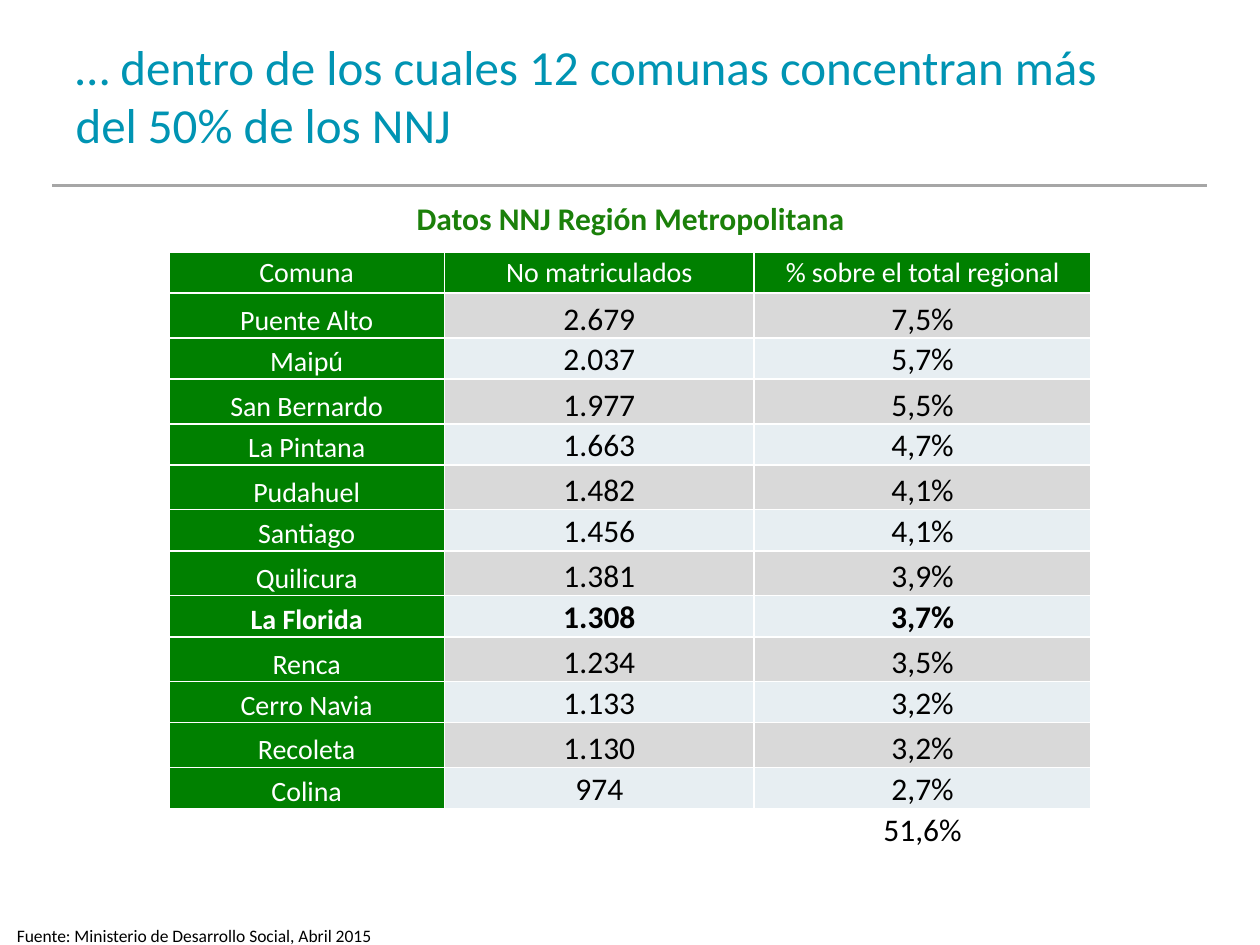
from dataclasses import dataclass
from typing import Any

from lxml import etree
from pptx import Presentation
from pptx.dml.color import RGBColor
from pptx.enum.shapes import MSO_CONNECTOR
from pptx.enum.text import MSO_ANCHOR, MSO_AUTO_SIZE, PP_ALIGN
from pptx.oxml.ns import qn
from pptx.util import Pt

LEFT, CENTER = PP_ALIGN.LEFT, PP_ALIGN.CENTER
TOP, MIDDLE, BOTTOM = MSO_ANCHOR.TOP, MSO_ANCHOR.MIDDLE, MSO_ANCHOR.BOTTOM
STRAIGHT = MSO_CONNECTOR.STRAIGHT
NO_AUTOFIT, GROW = MSO_AUTO_SIZE.NONE, MSO_AUTO_SIZE.SHAPE_TO_FIT_TEXT

FONT = "Calibri"
WHITE, BLACK, GREEN = "FFFFFF", "000000", "008000"
BANDS = ("D9D9D9", "E7EEF2")
COLUMN_WIDTHS = (157.5, 177, 192.5)
ROW_HEIGHT = 23.5
HEADINGS = ("Comuna", "No matriculados", "% sobre el total regional")
REGIONAL_SHARE = "51,6%"


@dataclass
class Style:
    size: float
    color: str
    bold: bool = False
    align: Any = LEFT
    line_spacing: float = 1.0


@dataclass
class Commune:
    name: str
    not_enrolled: str
    share: str
    bold: bool = False


COMMUNES = [
    Commune("Puente Alto", "2.679", "7,5%"),
    Commune("Maipú", "2.037", "5,7%"),
    Commune("San Bernardo", "1.977", "5,5%"),
    Commune("La Pintana", "1.663", "4,7%"),
    Commune("Pudahuel", "1.482", "4,1%"),
    Commune("Santiago", "1.456", "4,1%"),
    Commune("Quilicura", "1.381", "3,9%"),
    Commune("La Florida", "1.308", "3,7%", bold=True),
    Commune("Renca", "1.234", "3,5%"),
    Commune("Cerro Navia", "1.133", "3,2%"),
    Commune("Recoleta", "1.130", "3,2%"),
    Commune("Colina", "974", "2,7%"),
]


def rgb(value: str) -> RGBColor:
    return RGBColor.from_string(value)


def apply(target: Any, values: dict[str, Any]) -> None:
    for attribute, value in values.items():
        setattr(target, attribute, value)


def write(frame: Any, text: str, style: Style) -> None:
    paragraph = frame.paragraphs[0]
    apply(paragraph, {"alignment": style.align, "line_spacing": style.line_spacing})
    run = paragraph.add_run()
    run.text = text
    apply(run.font, {"name": FONT, "size": Pt(style.size), "bold": style.bold})
    run.font.color.rgb = rgb(style.color)


def add_label(slide: Any, box: tuple, text: str, style: Style, side_margin: float) -> None:
    frame = slide.shapes.add_textbox(*map(Pt, box)).text_frame
    apply(frame, {"word_wrap": True, "auto_size": GROW, "vertical_anchor": TOP,
                  "margin_left": Pt(side_margin), "margin_right": Pt(side_margin)})
    write(frame, text, style)


def format_cell(cell: Any, fill: str, anchor: Any = BOTTOM) -> None:
    apply(cell, {"margin_left": Pt(0.75), "margin_right": Pt(0.75),
                 "margin_top": Pt(0.75), "margin_bottom": 0, "vertical_anchor": anchor})
    properties = cell._tc.get_or_add_tcPr()
    for edge in ("a:lnL", "a:lnR", "a:lnT", "a:lnB"):
        border = etree.SubElement(properties, qn(edge), w=str(Pt(1)))
        solid = etree.SubElement(border, qn("a:solidFill"))
        etree.SubElement(solid, qn("a:srgbClr"), val=WHITE)
    cell.fill.solid()
    cell.fill.fore_color.rgb = rgb(fill)


def add_commune_table(slide: Any) -> None:
    row_count = len(COMMUNES) + 2
    table = slide.shapes.add_table(
        row_count, len(COLUMN_WIDTHS), Pt(96.5), Pt(144),
        Pt(sum(COLUMN_WIDTHS)), Pt(row_count * ROW_HEIGHT)).table
    apply(table, {"first_row": False, "horz_banding": False})
    for column, width in zip(table.columns, COLUMN_WIDTHS):
        column.width = Pt(width)

    # Header row
    for column, heading in enumerate(HEADINGS):
        cell = table.cell(0, column)
        format_cell(cell, GREEN, MIDDLE)
        write(cell.text_frame, heading, Style(16, WHITE, align=CENTER))

    # One row per commune, shaded in turn; the grey rows have wider line spacing
    for index, commune in enumerate(COMMUNES):
        band = BANDS[index % 2]
        spacing = 1.15 if index % 2 == 0 else 1.0
        name_style = Style(16, WHITE, commune.bold, CENTER)
        figure_style = Style(18, BLACK, commune.bold, CENTER, spacing)
        entries = ((commune.name, GREEN, name_style),
                   (commune.not_enrolled, band, figure_style),
                   (commune.share, band, figure_style))
        for column, (text, fill, style) in enumerate(entries):
            cell = table.cell(index + 1, column)
            format_cell(cell, fill)
            write(cell.text_frame, text, style)

    # Total row
    total = row_count - 1
    for column in range(len(COLUMN_WIDTHS)):
        format_cell(table.cell(total, column), WHITE)
    table.cell(total, 0).merge(table.cell(total, 1))
    write(table.cell(total, 2).text_frame, REGIONAL_SHARE, Style(18, BLACK, align=CENTER))


def main() -> None:
    deck = Presentation()
    apply(deck, {"slide_width": Pt(720), "slide_height": Pt(540)})
    slide = deck.slides.add_slide(deck.slide_layouts[5])

    # Title and the rule below it
    title = slide.shapes.title
    apply(title, {"left": Pt(36), "top": Pt(15), "width": Pt(613.5), "height": Pt(78.5)})
    apply(title.text_frame, {"word_wrap": True, "auto_size": NO_AUTOFIT,
                             "vertical_anchor": MIDDLE})
    write(title.text_frame,
          "… dentro de los cuales 12 comunas concentran más del 50% de los NNJ",
          Style(28, "0094B3"))
    rule = slide.shapes.add_connector(STRAIGHT, Pt(30), Pt(106), Pt(690), Pt(106))
    rule.line.color.rgb = rgb("A6A6A6")
    rule.line.width = Pt(2.25)
    etree.SubElement(rule._element.spPr, qn("a:effectLst"))

    # Table heading, source and table
    add_label(slide, (182, 110, 356.5, 28), "Datos NNJ Región Metropolitana",
              Style(18, "1B800A", True, CENTER), 3)
    add_label(slide, (2.5, 525, 414, 19.5),
              "Fuente: Ministerio de Desarrollo Social, Abril 2015", Style(10, BLACK), 7.2)
    add_commune_table(slide)

    deck.save("out.pptx")


if __name__ == "__main__":
    main()
